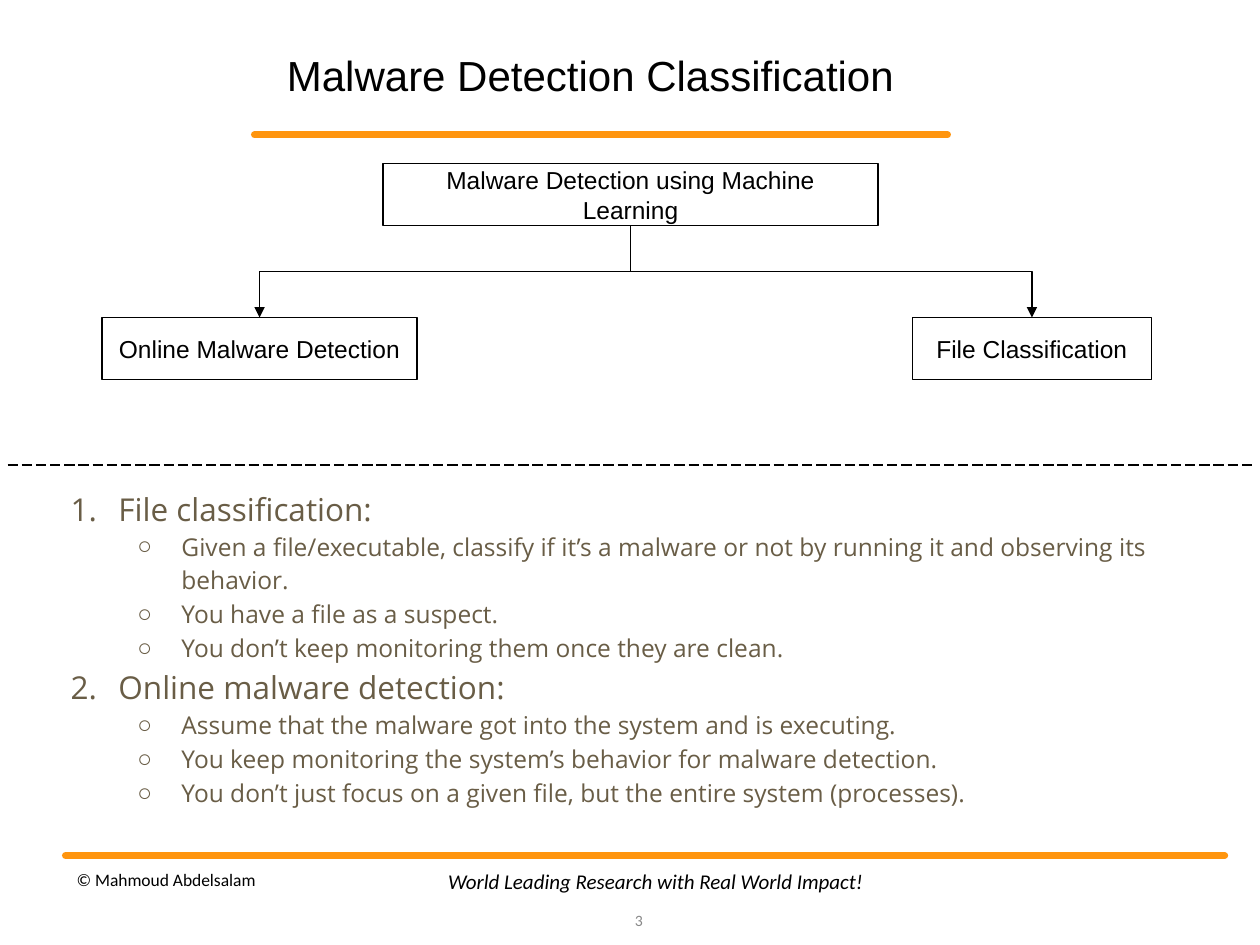
import pptx
import pptx.dml.color
import pptx.enum.dml
import pptx.enum.shapes
import pptx.enum.text
import pptx.oxml.ns
import pptx.util
from lxml import etree

Inches, Pt = pptx.util.Inches, pptx.util.Pt
ALIGN, ANCHOR = pptx.enum.text.PP_ALIGN, pptx.enum.text.MSO_ANCHOR
CONNECTOR = pptx.enum.shapes.MSO_CONNECTOR
COLORS = {"text": "000000", "box": "FFFFFF", "rule": "FF950E",
          "list": "695D46", "number": "888888"}

# (level, text)
POINTS = [
    (0, "File classification:"),
    (1, "Given a file/executable, classify if it’s a malware or not by running it "
        "and observing its behavior."),
    (1, "You have a file as a suspect."),
    (1, "You don’t keep monitoring them once they are clean."),
    (0, "Online malware detection:"),
    (1, "Assume that the malware got into the system and is executing."),
    (1, "You keep monitoring the system’s behavior for malware detection."),
    (1, "You don’t just focus on a given file, but the entire system (processes)."),
]
# By level: left margin and indent in inches, size in points, bullet
LEVELS = [(0.5, -0.38, 18, ("a:buAutoNum", {"type": "arabicPeriod"})),
          (1, -0.35, 14, ("a:buChar", {"char": "○"}))]


def rgb(name):
    return pptx.dml.color.RGBColor.from_string(COLORS[name])


def add_child(parent, tag, **attrs):
    return etree.SubElement(parent, pptx.oxml.ns.qn(tag), attrs)


def format_font(font, color, **values):
    for name, value in values.items():
        setattr(font, name, value)
    font.color.rgb = rgb(color)


def place(sp, box):
    for name, value in zip(("left", "top", "width", "height"), box):
        setattr(sp, name, Inches(value))


def set_frame(tf, anchor, inset_y):
    values = {"word_wrap": True, "auto_size": pptx.enum.text.MSO_AUTO_SIZE.NONE,
              "vertical_anchor": anchor,
              "margin_left": Inches(0.1), "margin_right": Inches(0.1),
              "margin_top": Inches(inset_y), "margin_bottom": Inches(inset_y)}
    for name, value in values.items():
        setattr(tf, name, value)


def write_line(sp, text, color="text", align=ALIGN.CENTER, anchor=ANCHOR.MIDDLE,
               inset_y=0.05, **font):
    set_frame(sp.text_frame, anchor, inset_y)
    p = sp.text_frame.paragraphs[0]
    p.alignment = align
    r = p.add_run()
    r.text = text
    format_font(r.font, color, **font)
    return p


def add_title(s, text):
    sp = s.shapes.title
    place(sp, (1.99, 0.34, 5.39, 0.51))
    p = write_line(sp, text, anchor=ANCHOR.BOTTOM, size=Pt(24), name="Arial")
    p.line_spacing = 0.9


def add_label(s, box, text, **style):
    sp = s.shapes.add_textbox(*map(Inches, box))
    write_line(sp, text, name="Calibri", **style)


def add_box(s, box, text):
    sp = s.shapes.add_shape(pptx.enum.shapes.MSO_SHAPE.RECTANGLE, *map(Inches, box))
    sp.shadow.inherit = False
    sp.fill.solid()
    sp.fill.fore_color.rgb = rgb("box")
    sp.line.color.rgb = rgb("text")
    sp.line.width = Pt(0.75)
    write_line(sp, text, inset_y=0.1, size=Pt(14), name="Arial")
    return sp


def style_line(c, color, width):
    c.line.color.rgb = rgb(color)
    c.line.width = Pt(width)
    add_child(c._element.spPr, "a:effectLst")


def add_rule(s, x1, x2, y, color, width):
    c = s.shapes.add_connector(CONNECTOR.STRAIGHT, *map(Inches, (x1, y, x2, y)))
    style_line(c, color, width)
    return c


def add_branch(s, parent, child):
    """Elbow arrow from the bottom of parent down to the top of child."""
    c = s.shapes.add_connector(CONNECTOR.ELBOW, 0, 0, 0, 0)
    c.begin_connect(parent, 2)
    c.end_connect(child, 0)
    x1, y1 = parent.left + parent.width // 2, parent.top + parent.height
    x2, y2 = child.left + child.width // 2, child.top
    # The elbow runs sideways by default, so it is turned a quarter about its centre
    drop, span = y2 - y1, abs(x2 - x1)
    c.left, c.top = (x1 + x2 - drop) // 2, (y1 + y2 - span) // 2
    c.width, c.height = drop, span
    to_right = x2 > x1
    xfrm = c._element.spPr.xfrm
    xfrm.flipH, xfrm.flipV = to_right, False
    xfrm.set("rot", str((270 if to_right else 90) * 60000))
    style_line(c, "text", 0.75)
    add_child(c.line._get_or_add_ln(), "a:tailEnd", type="triangle")


def add_points(s, points):
    sp = s.placeholders[1]
    place(sp, (0.34, 3.74, 9.32, 2.74))
    tf = sp.text_frame
    set_frame(tf, ANCHOR.TOP, 0.1)
    for i, (level, text) in enumerate(points):
        p = tf.add_paragraph() if i else tf.paragraphs[0]
        margin, indent, size, (tag, attrs) = LEVELS[level]
        p.level, p.line_spacing = level, 1.15
        p.space_before = p.space_after = Pt(0)
        pPr = p._p.get_or_add_pPr()
        pPr.set("marL", str(Inches(margin)))
        pPr.set("indent", str(Inches(indent)))
        add_child(add_child(pPr, "a:buClr"), "a:srgbClr", val=COLORS["list"])
        add_child(pPr, tag, **attrs)
        r = p.add_run()
        r.text = text
        format_font(r.font, "list", size=Pt(size), name="Open Sans")


def main():
    prs = pptx.Presentation()
    prs.slide_width, prs.slide_height = Inches(10), Inches(7.5)
    s = prs.slides.add_slide(prs.slide_layouts[1])

    add_title(s, "Malware Detection Classification")
    for x1, x2, y in ((2.02, 7.52, 1.07), (0.52, 9.72, 6.79)):
        c = add_rule(s, x1, x2, y, "rule", 4)
        c.line._get_or_add_ln().set("cap", "rnd")

    root = add_box(s, (3.04, 1.3, 3.93, 0.49), "Malware Detection using Machine Learning")
    for x, width, text in ((7.24, 1.9, "File Classification"),
                           (0.81, 2.5, "Online Malware Detection")):
        add_branch(s, root, add_box(s, (x, 2.52, width, 0.49), text))

    divider = add_rule(s, 0.06, 9.95, 3.69, "text", 0.75)
    divider.line.dash_style = pptx.enum.dml.MSO_LINE.LONG_DASH
    add_points(s, POINTS)

    add_label(s, (0.51, 6.8, 2.75, 0.36), "© Mahmoud Abdelsalam",
              align=ALIGN.LEFT, size=Pt(10))
    add_label(s, (3.02, 6.79, 4.37, 0.4), "World Leading Research with Real World Impact!",
              size=Pt(12), italic=True)
    add_label(s, (4.8, 7.1, 0.4, 0.4), "3", color="number",
              align=ALIGN.RIGHT, size=Pt(9))
    prs.save("out.pptx")


if __name__ == "__main__":
    main()
